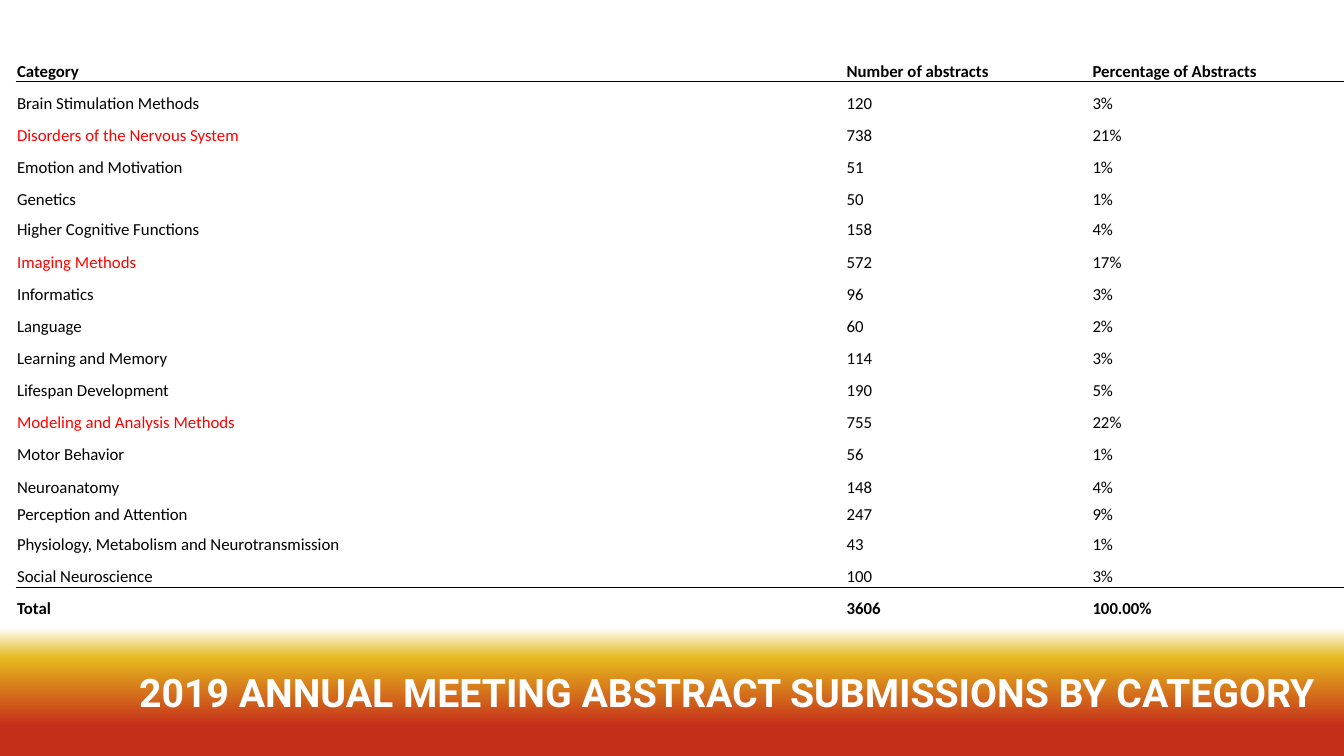
from lxml.etree import SubElement
from pptx import Presentation
from pptx.dml.color import RGBColor
from pptx.enum.text import MSO_ANCHOR, MSO_AUTO_SIZE, PP_ALIGN
from pptx.oxml.ns import qn
from pptx.util import Cm, Pt

BLACK = RGBColor(0x00, 0x00, 0x00)
RED = RGBColor(0xFF, 0x00, 0x00)
WHITE = RGBColor(0xFF, 0xFF, 0xFF)
GOLD = RGBColor(0xE6, 0xB9, 0x1E)
BRICK = RGBColor(0xC4, 0x2F, 0x1A)

BACKGROUND_STOPS = [(26, WHITE), (83, WHITE), (87, GOLD), (96, BRICK)]

TITLE = "2019 ANNUAL MEETING ABSTRACT SUBMISSIONS BY CATEGORY"
ROWS = [
    ("Category", "Number of abstracts", "Percentage of Abstracts"),
    ("Brain Stimulation Methods", "120", "3%"),
    ("Disorders of the Nervous System", "738", "21%"),
    ("Emotion and Motivation", "51", "1%"),
    ("Genetics", "50", "1%"),
    ("Higher Cognitive Functions", "158", "4%"),
    ("Imaging Methods", "572", "17%"),
    ("Informatics", "96", "3%"),
    ("Language", "60", "2%"),
    ("Learning and Memory", "114", "3%"),
    ("Lifespan Development", "190", "5%"),
    ("Modeling and Analysis Methods", "755", "22%"),
    ("Motor Behavior", "56", "1%"),
    ("Neuroanatomy", "148", "4%"),
    ("Perception and Attention", "247", "9%"),
    ("Physiology, Metabolism and Neurotransmission", "43", "1%"),
    ("Social Neuroscience", "100", "3%"),
    ("Total", "3606", "100.00%"),
]
LAST = len(ROWS) - 1
LARGEST = {
    "Disorders of the Nervous System",
    "Imaging Methods",
    "Modeling and Analysis Methods",
}
COLUMN_SHARES = [8.23, 2.44, 2.53]
ROW_HEIGHT = 0.81
SPECIAL_HEIGHTS = {0: 1.4, 5: 0.76, 14: 0.69, 15: 0.76}


def paint_background(page):
    fill = page.background.fill
    fill.gradient()
    fill.gradient_angle = 270
    stops = page.background._cSld.find(".//" + qn("a:gsLst"))
    for stop in list(stops):
        stops.remove(stop)
    for percent, color in BACKGROUND_STOPS:
        stop = SubElement(stops, qn("a:gs"), pos=str(percent * 1000))
        SubElement(stop, qn("a:srgbClr"), val=str(color))


def style_span(span, font, size, color, bold):
    span.font.name = font
    span.font.size = Pt(size)
    span.font.color.rgb = color
    span.font.bold = bold


def rule_cell(cell, side):
    properties = cell._tc.get_or_add_tcPr()
    line = properties.makeelement(qn("a:" + side), {"w": str(Pt(1))})
    fill = SubElement(line, qn("a:solidFill"))
    SubElement(fill, qn("a:srgbClr"), val=str(BLACK))
    properties.insert(0, line)


def fill_cell(cell, text, color, bold):
    cell.fill.background()
    cell.vertical_anchor = MSO_ANCHOR.BOTTOM
    cell.margin_left = cell.margin_right = cell.margin_top = Cm(0.02)
    cell.margin_bottom = Cm(0)
    cell.text_frame.text = text
    para = cell.text_frame.paragraphs[0]
    para.line_spacing = 1.07
    para.space_after = Pt(8)
    style_span(para.runs[0], "Calibri", 12, color, bold)


def add_abstract_table(page, left, top, width, height):
    frame = page.shapes.add_table(
        len(ROWS), len(COLUMN_SHARES), Cm(left), Cm(top), Cm(width), Cm(height)
    )
    table = frame.table
    table.first_row = False
    table.horz_banding = False
    for column, share in zip(table.columns, COLUMN_SHARES):
        column.width = Cm(width * share / sum(COLUMN_SHARES))
    for index, values in enumerate(ROWS):
        table.rows[index].height = Cm(SPECIAL_HEIGHTS.get(index, ROW_HEIGHT))
        for position, text in enumerate(values):
            cell = table.cell(index, position)
            color = RED if text in LARGEST else BLACK
            fill_cell(cell, text, color, index in (0, LAST))
            if index in (0, LAST - 1):
                rule_cell(cell, "lnB")
            elif index in (1, LAST):
                rule_cell(cell, "lnT")


def add_title(page, left, top, width, height):
    box = page.shapes.add_textbox(Cm(left), Cm(top), Cm(width), Cm(height))
    frame = box.text_frame
    frame.word_wrap = True
    frame.auto_size = MSO_AUTO_SIZE.SHAPE_TO_FIT_TEXT
    frame.text = TITLE
    para = frame.paragraphs[0]
    para.alignment = PP_ALIGN.CENTER
    para.space_before = Pt(3)
    style_span(para.runs[0], "Roboto", 28, WHITE, True)


def main():
    deck = Presentation()
    deck.slide_width = Cm(33.87)
    deck.slide_height = Cm(19.05)
    page = deck.slides.add_slide(deck.slide_layouts[6])
    paint_background(page)
    add_title(page, 2.01, 16.71, 32.61, 5.08)
    add_abstract_table(page, 0.41, 0.66, 33.53, 14.96)
    deck.save("out.pptx")


if __name__ == "__main__":
    main()
